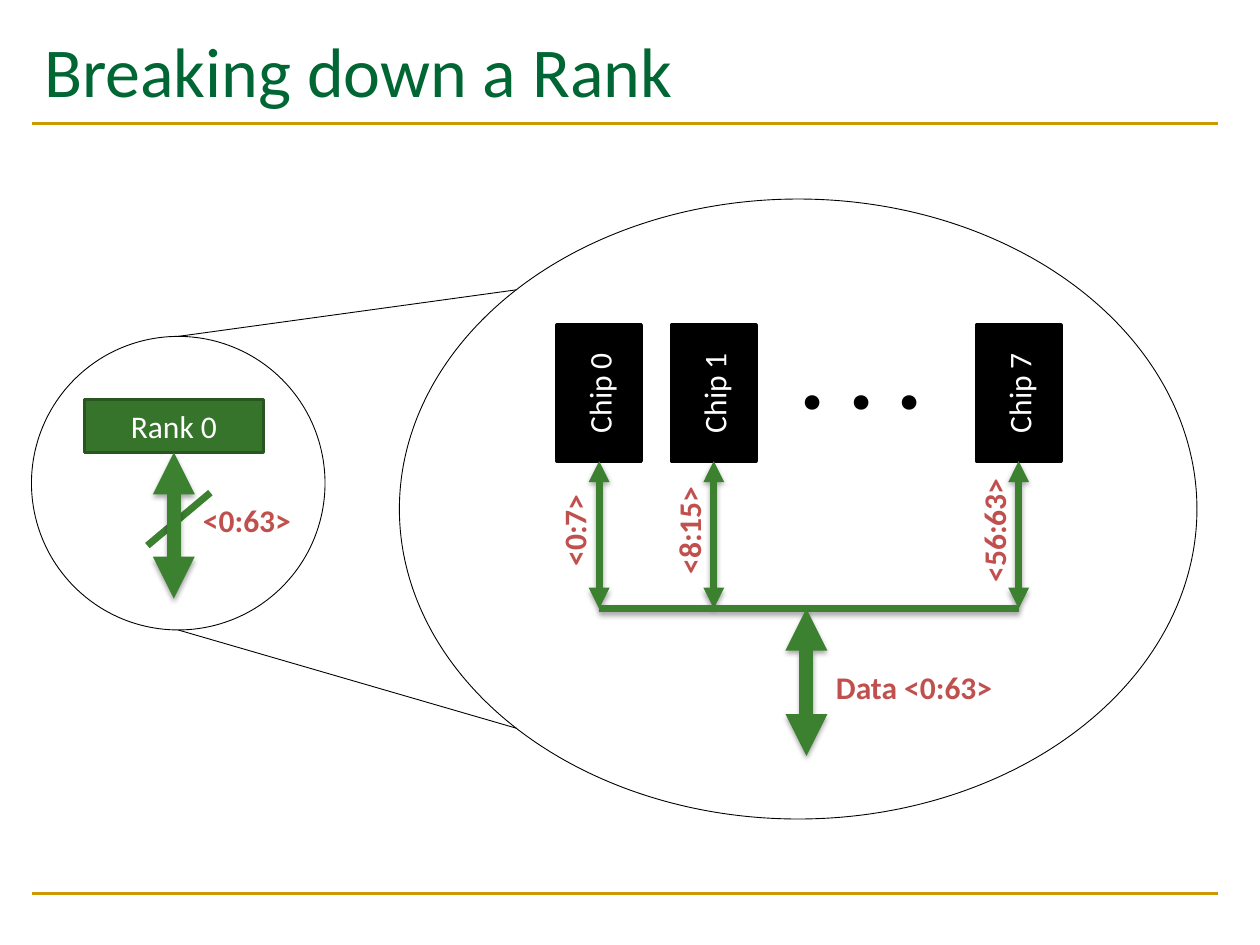
import pptx
import pptx.util
import pptx.dml.color
import pptx.enum.shapes
import pptx.enum.text
import pptx.oxml
import pptx.oxml.ns
import pptx.oxml.xmlchemy
from math import sqrt

Inches = pptx.util.Inches
Pt = pptx.util.Pt
RGBColor = pptx.dml.color.RGBColor
MSO_SHAPE = pptx.enum.shapes.MSO_SHAPE
PP_ALIGN = pptx.enum.text.PP_ALIGN
MSO_ANCHOR = pptx.enum.text.MSO_ANCHOR
OxmlElement = pptx.oxml.xmlchemy.OxmlElement

FONT = "Calibri"
TITLE_GREEN = RGBColor(0x00, 0x66, 0x33)
GOLD = RGBColor(0xCC, 0x99, 0x00)
RANK_FILL = RGBColor(0x35, 0x74, 0x2A)
RANK_EDGE = RGBColor(0x27, 0x56, 0x1F)
BUS_GREEN = RGBColor(0x3B, 0x81, 0x2F)
RED = RGBColor(0xC0, 0x50, 0x4D)
BLACK = RGBColor(0x00, 0x00, 0x00)
WHITE = RGBColor(0xFF, 0xFF, 0xFF)

SHADOW = (
    '<a:outerShdw %s blurRad="39370" dist="22860" dir="5400000" rotWithShape="0">'
    '<a:srgbClr val="000000"><a:alpha val="35000"/></a:srgbClr></a:outerShdw>'
    % pptx.oxml.ns.nsdecls("a")
)


def add_line(page, start, end, color, width, arrows=False, shadow=False):
    line = page.shapes.add_connector(
        pptx.enum.shapes.MSO_CONNECTOR.STRAIGHT,
        *(Inches(value) for value in (*start, *end)))
    line.line.color.rgb = color
    line.line.width = Pt(width)
    if arrows:
        outline = line.line._get_or_add_ln()
        for tag in ("a:headEnd", "a:tailEnd"):
            tip = OxmlElement(tag)
            tip.set("type", "triangle")
            outline.append(tip)
    effects = OxmlElement("a:effectLst")
    if shadow:
        effects.append(pptx.oxml.parse_xml(SHADOW))
    line._element.spPr.append(effects)
    return line


def write(shape, text, size, color, bold=False):
    para = shape.text_frame.paragraphs[0]
    para.text = text
    para.alignment = PP_ALIGN.CENTER
    para.font.name = FONT
    para.font.size = Pt(size)
    para.font.bold = bold
    para.font.color.rgb = color


def add_label(page, box, text, size=18, color=RED, rotation=0):
    label = page.shapes.add_textbox(*(Inches(value) for value in box))
    label.text_frame.word_wrap = True
    label.rotation = rotation
    write(label, text, size, color, bold=True)


def add_block(page, box, text, fill, edge):
    block = page.shapes.add_shape(
        MSO_SHAPE.RECTANGLE, *(Inches(value) for value in box))
    block.shadow.inherit = False
    block.fill.solid()
    block.fill.fore_color.rgb = fill
    block.line.color.rgb = edge
    block.line.width = Pt(2)
    block.text_frame.vertical_anchor = MSO_ANCHOR.MIDDLE
    write(block, text, 18, WHITE)
    return block


def add_bubble(page, box):
    bubble = page.shapes.add_shape(
        MSO_SHAPE.OVAL, *(Inches(value) for value in box))
    bubble.shadow.inherit = False
    bubble.fill.background()
    bubble.line.color.rgb = BLACK
    bubble.line.width = Pt(0.5)


def add_header(page, box):
    left, top, width, height = box
    title = page.shapes.title
    title.left, title.top, title.width, title.height = (
        Inches(value) for value in box)
    title.text_frame.vertical_anchor = MSO_ANCHOR.TOP
    write(title, "Breaking down a Rank", 40, TITLE_GREEN)
    title.text_frame.paragraphs[0].alignment = PP_ALIGN.LEFT
    # Gold rules under the title and at the foot of the page
    for y in (0.98, 7.09):
        add_line(page, (left, y), (left + width, y), GOLD, 1.5)


def add_rank(page, box):
    left, top, width, height = box
    add_bubble(page, box)
    rank = add_block(page, (left + 0.42, top + 0.5, 1.42, 0.42), "Rank 0",
                     RANK_FILL, RANK_EDGE)
    # Slash marking a wide bus, then the bus itself
    add_line(page, (left + 0.92, top + 1.66), (left + 1.42, top + 1.24),
             BUS_GREEN, 4)
    x = left + 1.13
    bus = add_line(page, (x, top + 0.92), (x, top + 2.08), BUS_GREEN, 8,
                   arrows=True, shadow=True)
    bus.begin_connect(rank, 2)
    bus.end_x = bus.begin_x
    add_label(page, (left + 1.17, top + 1.26, 1.08, 0.4), "<0:63>")


def add_chips(page, box):
    left, top, width, height = box
    add_bubble(page, box)
    chip_width, chip_height = 0.67, 1.08
    chip_top = top + 1
    bus_y = top + 3.25
    chips = (("Chip 0", "<0:7>", 1.25), ("Chip 1", "<8:15>", 2.16),
             ("Chip 7", "<56:63>", 4.58))
    centers = [left + offset + chip_width / 2 for _, _, offset in chips]

    # Chips, each with its slice of the data bus
    for (name, bits, offset), x in zip(chips, centers):
        chip = add_block(page, (left + offset, chip_top, chip_width, chip_height),
                         name, BLACK, BLACK)
        chip.text_frame._txBody.bodyPr.set("vert", "vert270")
        lane = add_line(page, (x, chip_top + chip_height), (x, bus_y),
                        BUS_GREEN, 4, arrows=True, shadow=True)
        lane.begin_connect(chip, 2)
        add_label(page, (x - 0.74, top + 2.43, 1.08, 0.4), bits, rotation=270)
    add_label(page, (left + 3, top + 0.84, 1.33, 1.04), ". . .", 56, BLACK)

    # Shared bus and its outlet
    add_line(page, (centers[0], bus_y), (centers[-1], bus_y), BUS_GREEN, 4,
             shadow=True)
    x = left + 3.23
    add_line(page, (x, bus_y), (x, bus_y + 1.17), BUS_GREEN, 8,
             arrows=True, shadow=True)
    add_label(page, (left + 3.25, top + 3.67, 1.67, 0.4), "Data <0:63>")


def add_zoom_lines(page, small, large):
    left, top, width, height = small
    big_left, big_top, big_width, big_height = large
    # Diagonal points of an ellipse lie this share inside its box
    inset = (1 - sqrt(0.5)) / 2
    x = left + width / 2
    for y, share in ((top, inset), (top + height, 1 - inset)):
        end = (big_left + big_width * inset, big_top + big_height * share)
        add_line(page, (x, y), end, BLACK, 0.5)


def main():
    deck = pptx.Presentation()
    deck.slide_width = Inches(10)
    deck.slide_height = Inches(7.5)
    page = deck.slides.add_slide(deck.slide_layouts[5])
    rank_box = (0.25, 2.67, 2.33, 2.33)
    chips_box = (3.17, 1.58, 6.33, 4.92)
    add_header(page, (0.25, 0.17, 9.42, 1.17))
    add_zoom_lines(page, rank_box, chips_box)
    add_rank(page, rank_box)
    add_chips(page, chips_box)
    deck.save("out.pptx")


if __name__ == "__main__":
    main()
